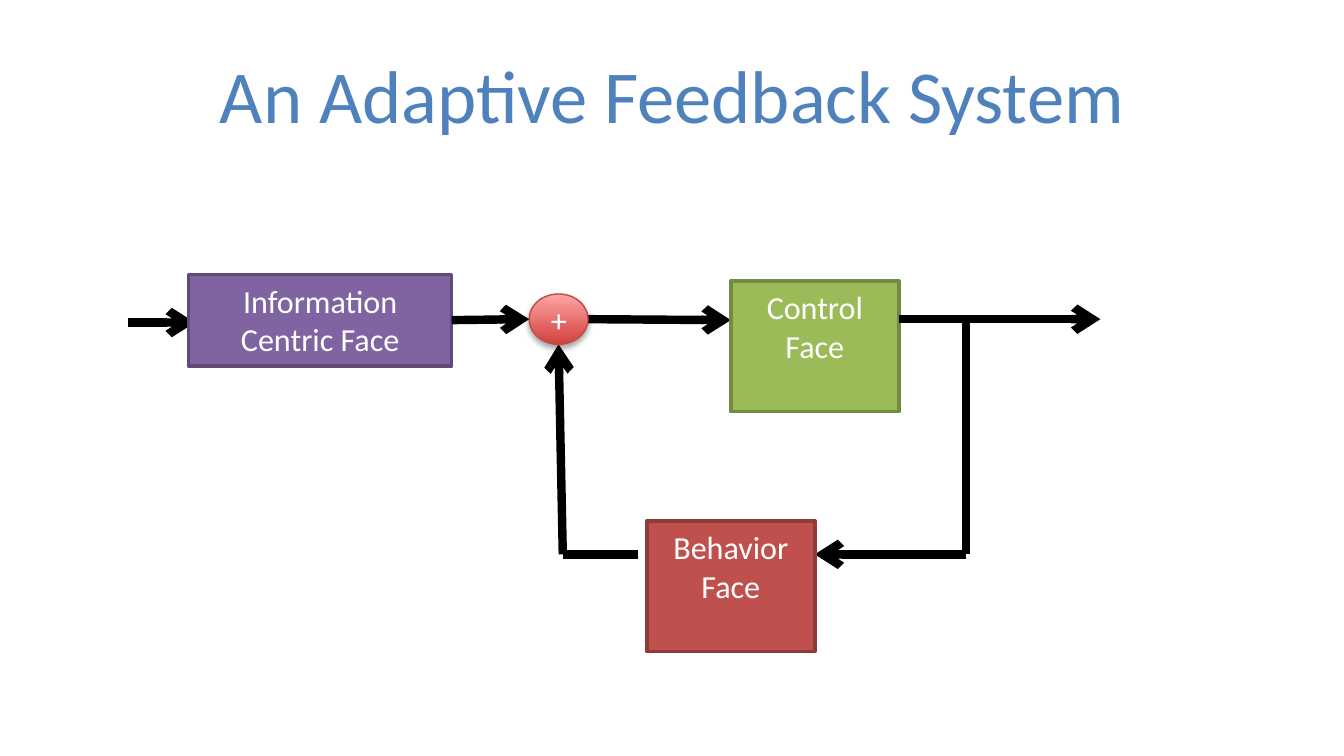
import pptx
import pptx.dml.color
import pptx.enum.shapes
import pptx.enum.text
import pptx.oxml
import pptx.oxml.ns
import pptx.util

Pt = pptx.util.Pt
RGBColor = pptx.dml.color.RGBColor
MSO_SHAPE = pptx.enum.shapes.MSO_SHAPE
ANCHOR = pptx.enum.text.MSO_ANCHOR
CENTER = pptx.enum.text.PP_ALIGN.CENTER

BLACK = RGBColor(0x00, 0x00, 0x00)
WHITE = RGBColor(0xFF, 0xFF, 0xFF)
BLUE = RGBColor(0x4F, 0x81, 0xBD)
PURPLE, PURPLE_EDGE = RGBColor(0x80, 0x64, 0xA2), RGBColor(0x5F, 0x4A, 0x78)
GREEN, GREEN_EDGE = RGBColor(0x9B, 0xBB, 0x59), RGBColor(0x73, 0x8A, 0x42)
RED, RED_EDGE = RGBColor(0xC0, 0x50, 0x4D), RGBColor(0x8E, 0x3B, 0x39)
SUM_DARK, SUM_LIGHT = RGBColor(0xD1, 0x40, 0x3C), RGBColor(0xFF, 0xA6, 0xA5)
SUM_EDGE = RGBColor(0xBF, 0x4C, 0x48)

NS = pptx.oxml.ns.nsdecls("a")
ARROWHEAD = f'<a:tailEnd {NS} type="arrow"/>'
NO_EFFECTS = f"<a:effectLst {NS}/>"
SOFT_SHADOW = (
    f'<a:outerShdw {NS} blurRad="{Pt(3.1)}" dist="{Pt(1.8)}" dir="5400000" rotWithShape="0">'
    '<a:srgbClr val="000000"><a:alpha val="35000"/></a:srgbClr></a:outerShdw>'
)


class Diagram:
    """Holds the style and the current slide."""

    font_name = "Calibri"
    title_size = Pt(40)
    label_size = Pt(17.2)
    signal_width = Pt(4.5)

    def __init__(self, slide):
        self.slide = slide

    def label(self, shape, text, size, color, anchor):
        frame = shape.text_frame
        frame.text = text
        for name, value in {"word_wrap": True, "vertical_anchor": anchor}.items():
            setattr(frame, name, value)
        paragraph = frame.paragraphs[0]
        paragraph.alignment = CENTER
        font = paragraph.runs[0].font
        for name, value in {"name": self.font_name, "size": size}.items():
            setattr(font, name, value)
        font.color.rgb = color

    def title(self, text, left, top, width, height):
        heading = self.slide.shapes.title
        place = {"left": left, "top": top, "width": width, "height": height}
        for name, value in place.items():
            setattr(heading, name, Pt(value))
        self.label(heading, text, self.title_size, BLUE, ANCHOR.MIDDLE)

    def outlined(self, preset, place, edge, edge_width):
        shape = self.slide.shapes.add_shape(preset, *map(Pt, place))
        shape.shadow.inherit = False
        shape.line.color.rgb = edge
        shape.line.width = Pt(edge_width)
        return shape

    def block(self, text, place, fill, edge):
        block = self.outlined(MSO_SHAPE.RECTANGLE, place, edge, 2)
        block.fill.solid()
        block.fill.fore_color.rgb = fill
        self.label(block, text, self.label_size, WHITE, ANCHOR.TOP)
        return block

    def junction(self, text, place):
        junction = self.outlined(MSO_SHAPE.OVAL, place, SUM_EDGE, 0.75)
        junction.fill.gradient()
        junction.fill.gradient_angle = 90
        for stop, color in zip(junction.fill.gradient_stops, (SUM_DARK, SUM_LIGHT)):
            stop.color.rgb = color
        effects = junction._element.spPr.find(pptx.oxml.ns.qn("a:effectLst"))
        effects.append(pptx.oxml.parse_xml(SOFT_SHADOW))
        self.label(junction, text, self.label_size, WHITE, ANCHOR.MIDDLE)

    def signal(self, start, end, arrow=True):
        signal = self.slide.shapes.add_connector(
            pptx.enum.shapes.MSO_CONNECTOR.STRAIGHT, *map(Pt, (*start, *end)))
        signal.line.color.rgb = BLACK
        signal.line.width = self.signal_width
        if arrow:
            signal.line._get_or_add_ln().append(pptx.oxml.parse_xml(ARROWHEAD))
        signal._element.spPr.append(pptx.oxml.parse_xml(NO_EFFECTS))
        return signal


def main():
    deck = pptx.Presentation()
    deck.slide_width, deck.slide_height = Pt(720), Pt(405)
    diagram = Diagram(deck.slides.add_slide(deck.slide_layouts[5]))
    diagram.title("An Adaptive Feedback System", 36, 16.5, 648, 67.5)

    # Heights of the two paths, and the columns they meet
    forward, feedback = 171, 297
    sum_left, sum_right, sum_bottom = 283.5, 315, 184.5
    control_left, control_right = 391.5, 481.5
    behavior_left, behavior_right = 346.5, 436.5
    tap, output, sum_return = 517.5, 522, 301.5

    # Forward path
    diagram.signal((68.4, 172.8), (104.4, 172.8))
    information = diagram.block("Information Centric Face", (101, 147, 141, 49),
                                PURPLE, PURPLE_EDGE)
    diagram.signal((sum_right, forward), (control_left, forward + 0.5))
    diagram.block("Control Face", (control_left, 150.5, 90, 70), GREEN, GREEN_EDGE)
    diagram.signal((output, forward), (589.5, forward))

    # Feedback path
    diagram.signal((tap, forward), (tap, feedback), arrow=False)
    diagram.signal((tap, feedback), (behavior_right, feedback))
    diagram.block("Behavior Face", (behavior_left, 279, 90, 70), RED, RED_EDGE)
    diagram.signal((behavior_left - 4.5, feedback), (sum_return, feedback), arrow=False)
    diagram.signal((control_right, forward), (output, forward), arrow=False)
    diagram.signal((sum_return, feedback), (299.25, sum_bottom))

    # Summing junction and its input
    diagram.junction("+", (sum_left, 157.5, 31.5, 27))
    sum_input = diagram.signal((242, forward), (sum_left, forward))
    sum_input.begin_connect(information, 3)

    deck.save("out.pptx")


if __name__ == "__main__":
    main()
